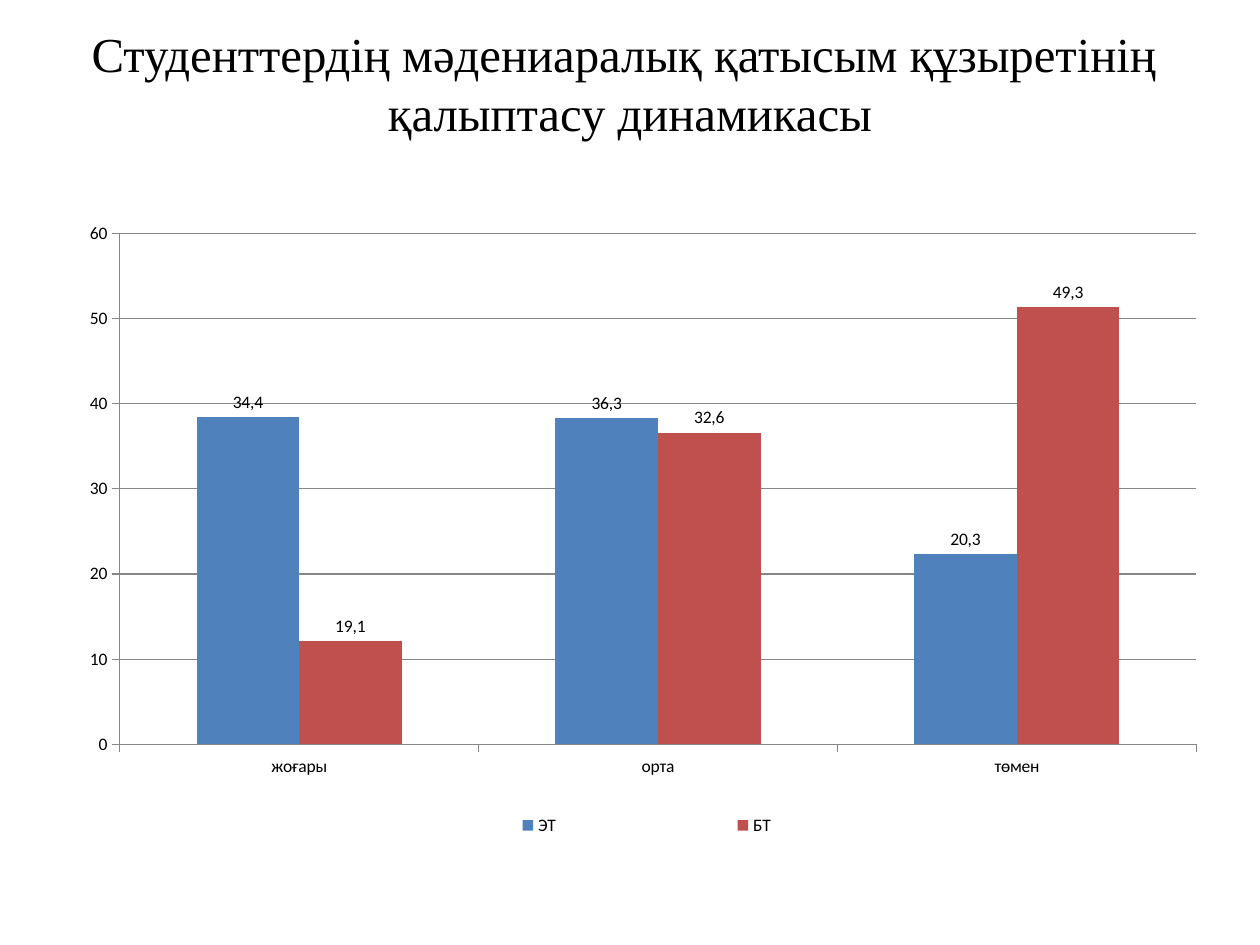
from lxml.etree import SubElement
from pptx import Presentation
from pptx.chart.data import CategoryChartData
from pptx.dml.color import RGBColor
from pptx.enum.chart import XL_CHART_TYPE, XL_LABEL_POSITION, XL_LEGEND_POSITION, XL_TICK_MARK
from pptx.enum.text import MSO_ANCHOR, MSO_AUTO_SIZE, PP_ALIGN
from pptx.oxml.ns import qn
from pptx.util import Cm, Pt

COLORS = {"text": "000000", "grid": "868686", "ЭТ": "4F81BD", "БТ": "C0504D"}
LEVELS = ["жоғары", "орта", "төмен"]
GROUPS = {
    "ЭТ": {"values": [38.4, 38.3, 22.3], "labels": ["34,4", "36,3", "20,3"]},
    "БТ": {"values": [12.1, 36.6, 51.3], "labels": ["19,1", "32,6", "49,3"]},
}


def write_text(frame, text, font="Calibri", size=10, color="text"):
    frame.text = text
    para = frame.paragraphs[0]
    para.alignment = PP_ALIGN.CENTER
    for span in para.runs:
        span.font.name = font
        span.font.size = Pt(size)
        span.font.color.rgb = RGBColor.from_string(COLORS[color])


def set_layout(parent, position, **settings):
    """Give a chart part a manual layout, placed at a child position."""
    for old_layout in parent.findall(qn("c:layout")):
        parent.remove(old_layout)
    layout = SubElement(parent, qn("c:layout"))
    manual = SubElement(layout, qn("c:manualLayout"))
    for name, value in settings.items():
        SubElement(manual, qn(f"c:{name}")).set("val", str(value))
    parent.insert(position, layout)


deck = Presentation()
deck.slide_width, deck.slide_height = Cm(25.4), Cm(19.05)
page = deck.slides.add_slide(deck.slide_layouts[5])

# Title
title = page.shapes.title
title.left, title.top, title.width, title.height = Cm(1.27), Cm(0.35), Cm(22.86), Cm(3.59)
write_text(
    title.text_frame,
    "Студенттердің мәдениаралық қатысым құзыретінің \vқалыптасу динамикасы",
    font="Times New Roman",
    size=27.9,
)
title.text_frame.vertical_anchor = MSO_ANCHOR.TOP
title.text_frame.auto_size = MSO_AUTO_SIZE.NONE

# Chart
data = CategoryChartData()
data.categories = LEVELS
for name, group in GROUPS.items():
    data.add_series(name, group["values"])
chart = page.shapes.add_chart(
    XL_CHART_TYPE.COLUMN_CLUSTERED, Cm(1.27), Cm(4.45), Cm(22.86), Cm(12.57), data
).chart
chart.has_title = False
chart.font.name = "Calibri"
chart.font.size = Pt(10)
chart.font.color.rgb = RGBColor.from_string(COLORS["text"])

plot = chart.plots[0]
plot.gap_width = 150
plot.overlap = 0
plot.vary_by_categories = False
for series in plot.series:
    series.format.fill.solid()
    series.format.fill.fore_color.rgb = RGBColor.from_string(COLORS[series.name])
    series.data_labels.show_value = True
    series.data_labels.position = XL_LABEL_POSITION.OUTSIDE_END
    for index, text in enumerate(GROUPS[series.name]["labels"]):
        label = series.points[index].data_label
        write_text(label.text_frame, text)
        label.position = XL_LABEL_POSITION.OUTSIDE_END

# Axes
value_axis = chart.value_axis
value_axis.minimum_scale, value_axis.maximum_scale, value_axis.major_unit = 0, 60, 10
value_axis.has_major_gridlines = True
for axis in (chart.category_axis, value_axis):
    axis.major_tick_mark = XL_TICK_MARK.OUTSIDE
    axis.minor_tick_mark = XL_TICK_MARK.NONE
for part in (chart.category_axis, value_axis, value_axis.major_gridlines):
    part.format.line.width = Pt(0.75)
    part.format.line.color.rgb = RGBColor.from_string(COLORS["grid"])

# Legend and plot area placement
chart.has_legend = True
chart.legend.position = XL_LEGEND_POSITION.RIGHT
chart.legend.include_in_layout = False
chart_xml = chart.element.find(qn("c:chart"))
set_layout(
    chart_xml.find(qn("c:plotArea")), 0,
    layoutTarget="inner", xMode="edge", yMode="edge", x=0.05, y=0.02, w=0.95, h=0.82,
)
set_layout(
    chart_xml.find(qn("c:legend")), 1,
    xMode="edge", yMode="edge", x=0.25, y=0.94, w=0.53, h=0.06,
)

deck.save("out.pptx")
